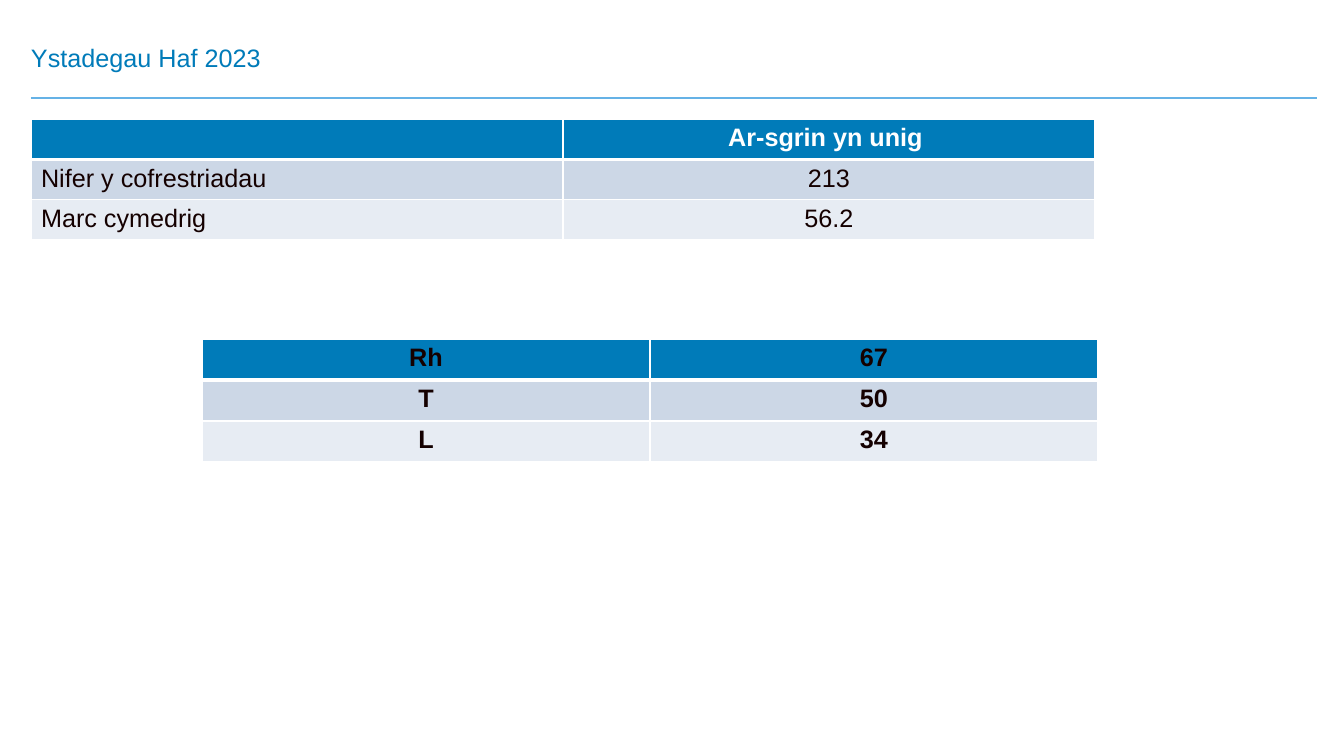
from lxml.etree import SubElement
from pptx import Presentation
from pptx.dml.color import RGBColor
from pptx.enum.shapes import MSO_CONNECTOR
from pptx.enum.text import MSO_ANCHOR, PP_ALIGN
from pptx.oxml.ns import qn
from pptx.util import Pt

PX = 914400 / 100.8
BLUE = "007BB9"
RULE_BLUE = "65B2E6"
DARK = "140000"
WHITE = "FFFFFF"
BANDS = ["CCD7E6", "E7ECF3"]


def px(length):
    return round(length * PX)


def color(hex_string):
    return RGBColor.from_string(hex_string)


def write(frame, text, ink=DARK, bold=False, align=PP_ALIGN.LEFT, spacing=None):
    paragraph = frame.paragraphs[0]
    paragraph.alignment = align
    paragraph.line_spacing = spacing
    run = paragraph.add_run()
    run.text = text
    run.font.name = "Arial"
    run.font.size = Pt(18)
    run.font.bold = bold
    run.font.color.rgb = color(ink)


def add_borders(cell, **widths):
    """Draw white cell borders; widths are points for L, R, T and B."""
    properties = cell._tc.get_or_add_tcPr()
    for side, width in widths.items():
        border = SubElement(properties, qn(f"a:ln{side}"), w=str(Pt(width)))
        fill = SubElement(border, qn("a:solidFill"))
        SubElement(fill, qn("a:srgbClr"), val=WHITE)


def add_heading(slide, left, top, width, height):
    title = slide.shapes.add_textbox(px(left), px(top), px(width), px(height))
    frame = title.text_frame
    frame.word_wrap = True
    frame.vertical_anchor = MSO_ANCHOR.BOTTOM
    frame.margin_left = frame.margin_right = 0
    frame.margin_top = frame.margin_bottom = 0
    write(frame, "Ystadegau Haf 2023", ink=BLUE, spacing=0.9)

    rule_y = px(top + height + 25)
    rule = slide.shapes.add_connector(
        MSO_CONNECTOR.STRAIGHT, px(left), rule_y, px(left + 1286), rule_y)
    rule.line.color.rgb = color(RULE_BLUE)
    rule.line.width = Pt(1.75)
    SubElement(rule._element.spPr, qn("a:effectLst"))


def add_statistics(slide, left, top, width, row_height, rows,
                   header_ink=WHITE, label_align=PP_ALIGN.LEFT, bold=False):
    """Place a table with a blue header row and banded rows below it."""
    table = slide.shapes.add_table(
        len(rows), len(rows[0]), px(left), px(top),
        px(width), px(row_height * len(rows))).table
    for r, row in enumerate(rows):
        header = r == 0
        for c, text in enumerate(row):
            cell = table.cell(r, c)
            add_borders(cell, L=1, R=1, T=3 if r == 1 else 1, B=3 if header else 1)
            cell.fill.solid()
            cell.fill.fore_color.rgb = color(BLUE if header else BANDS[(r - 1) % 2])
            write(cell.text_frame, text, bold=header or bold,
                  ink=header_ink if header else DARK,
                  align=label_align if c == 0 else PP_ALIGN.CENTER)


def main():
    presentation = Presentation()
    presentation.slide_width = px(1344)
    presentation.slide_height = px(756)
    slide = presentation.slides.add_slide(presentation.slide_layouts[6])

    add_heading(slide, 31, 23, 1127, 50)
    add_statistics(slide, 31, 119, 1064, 38, [
        ["", "Ar-sgrin yn unig "],
        ["Nifer y cofrestriadau", "213"],
        ["Marc cymedrig", "56.2"],
    ])
    add_statistics(slide, 202, 339, 896, 41, [
        ["Rh", "67"],
        ["T", "50"],
        ["L", "34"],
    ], header_ink=DARK, label_align=PP_ALIGN.CENTER, bold=True)

    presentation.save("out.pptx")


if __name__ == "__main__":
    main()
